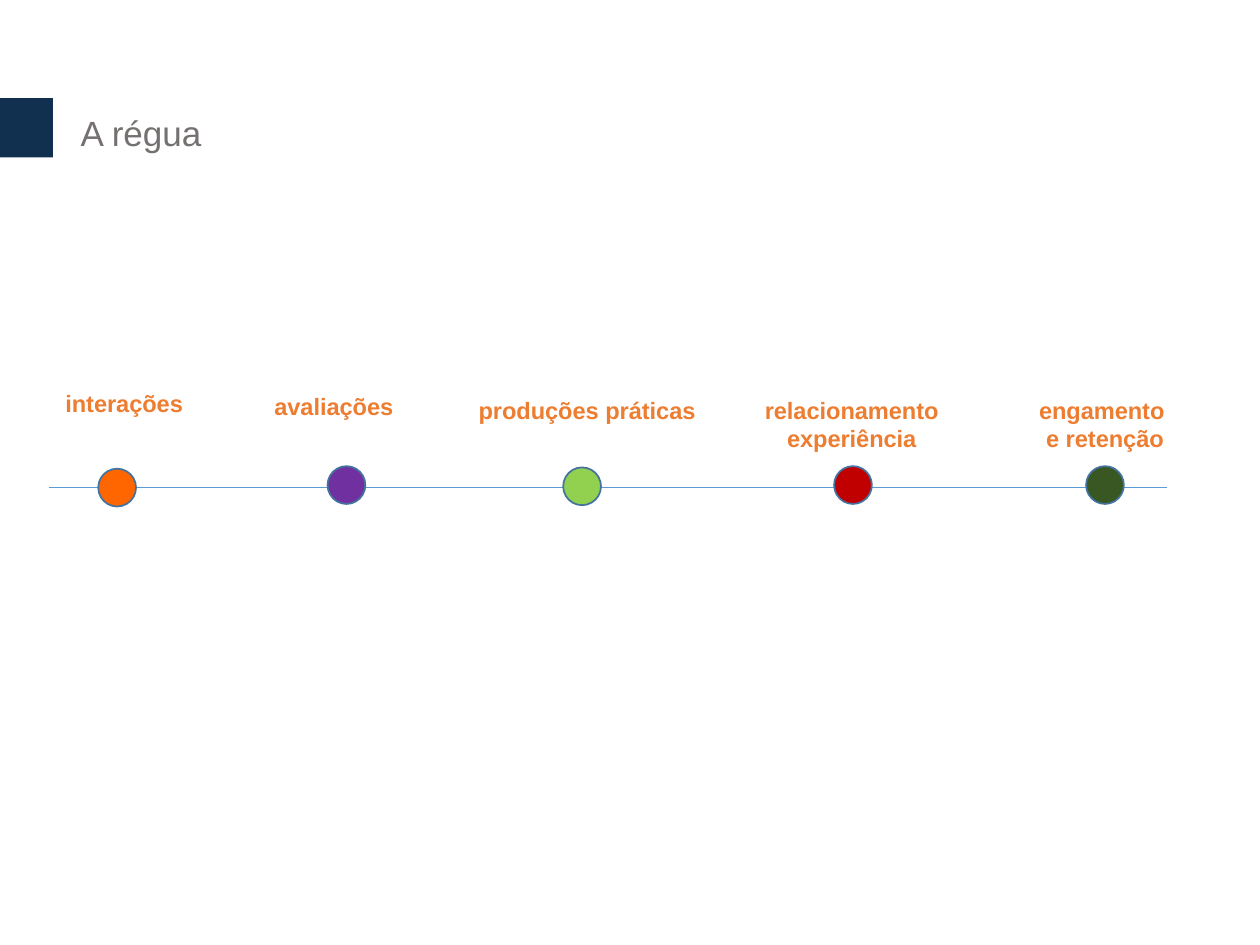
from lxml.etree import SubElement
from pptx import Presentation
from pptx.dml.color import RGBColor
from pptx.enum.shapes import MSO_CONNECTOR, MSO_SHAPE
from pptx.enum.text import MSO_ANCHOR, MSO_AUTO_SIZE, PP_ALIGN
from pptx.oxml.ns import qn
from pptx.util import Inches, Pt

NAVY = RGBColor(0x11, 0x30, 0x4F)
GREY = RGBColor(0x76, 0x71, 0x71)
BLUE = RGBColor(0x5B, 0x9B, 0xD5)
OUTLINE = RGBColor(0x43, 0x73, 0x9E)
LABEL = RGBColor(0xED, 0x7D, 0x31)
ORANGE = RGBColor(0xFF, 0x66, 0x00)
PURPLE = RGBColor(0x70, 0x30, 0xA0)
GREEN = RGBColor(0x92, 0xD0, 0x50)
RED = RGBColor(0xC0, 0x00, 0x00)
DARK_GREEN = RGBColor(0x38, 0x57, 0x23)

DOT = 0.3
LEFT, CENTER = PP_ALIGN.LEFT, PP_ALIGN.CENTER
STAGES = [
    (ORANGE, (0.78, 3.72), "interações", (0.42, 3.04, 1.15, 0.33), LEFT),
    (PURPLE, (2.6, 3.7), "avaliações", (2.06, 3.06, 1.18, 0.33), CENTER),
    (GREEN, (4.47, 3.71), "produções práticas", (3.68, 3.09, 1.96, 0.33), CENTER),
    (RED, (6.62, 3.7), "relacionamento\nexperiência", (5.93, 3.09, 1.66, 0.56), CENTER),
    (DARK_GREEN, (8.62, 3.7), "engamento \ve retenção", (8.14, 3.09, 1.26, 0.56), CENTER),
]


class Deck:
    """Holds the text styles and the current slide, and draws each kind of element."""

    title_font = {"name": "Arial", "size": Pt(20), "bold": False}
    label_font = {"name": "Arial", "size": Pt(13.5), "bold": True}

    def __init__(self, prs):
        self.s = prs.slides.add_slide(prs.slide_layouts[5])

    def set_text(self, tf, text, font, color, align, **para):
        tf.text = text
        for p in tf.paragraphs:
            for key, value in {"alignment": align, **para}.items():
                setattr(p, key, value)
            for r in p.runs:
                for key, value in font.items():
                    setattr(r.font, key, value)
                r.font.color.rgb = color

    def title(self, text, *box):
        sp = self.s.shapes.title
        sp.left, sp.top, sp.width, sp.height = map(Inches, box)
        tf = sp.text_frame
        tf.auto_size = MSO_AUTO_SIZE.NONE
        tf.vertical_anchor = MSO_ANCHOR.BOTTOM
        self.set_text(tf, text, self.title_font, GREY, LEFT, line_spacing=0.9)

    def label(self, text, box, align):
        tf = self.s.shapes.add_textbox(*map(Inches, box)).text_frame
        tf.word_wrap = False
        tf.auto_size = MSO_AUTO_SIZE.SHAPE_TO_FIT_TEXT
        self.set_text(tf, text, self.label_font, LABEL, align)

    def shape(self, kind, box, fill, outline=None):
        sp = self.s.shapes.add_shape(kind, *map(Inches, box))
        sp.shadow.inherit = False
        sp.fill.solid()
        sp.fill.fore_color.rgb = fill
        if outline is None:
            sp.line.fill.background()
        else:
            sp.line.color.rgb = outline
            sp.line.width = Pt(1)

    def line(self, *ends):
        cx = self.s.shapes.add_connector(MSO_CONNECTOR.STRAIGHT, *map(Inches, ends))
        cx.line.color.rgb = BLUE
        cx.line.width = Pt(0.5)
        SubElement(cx._element.spPr, qn("a:effectLst"))


def main():
    prs = Presentation()
    prs.slide_width, prs.slide_height = Inches(10), Inches(7.5)
    deck = Deck(prs)
    deck.line(0.39, 3.87, 9.26, 3.87)
    for color, dot, text, box, align in STAGES:
        deck.shape(MSO_SHAPE.OVAL, (*dot, DOT, DOT), color, OUTLINE)
        deck.label(text, box, align)
    deck.title("A régua", 0.54, 0.48, 10, 0.79)
    deck.shape(MSO_SHAPE.RECTANGLE, (0, 0.78, 0.42, 0.47), NAVY)
    prs.save("out.pptx")


if __name__ == "__main__":
    main()
